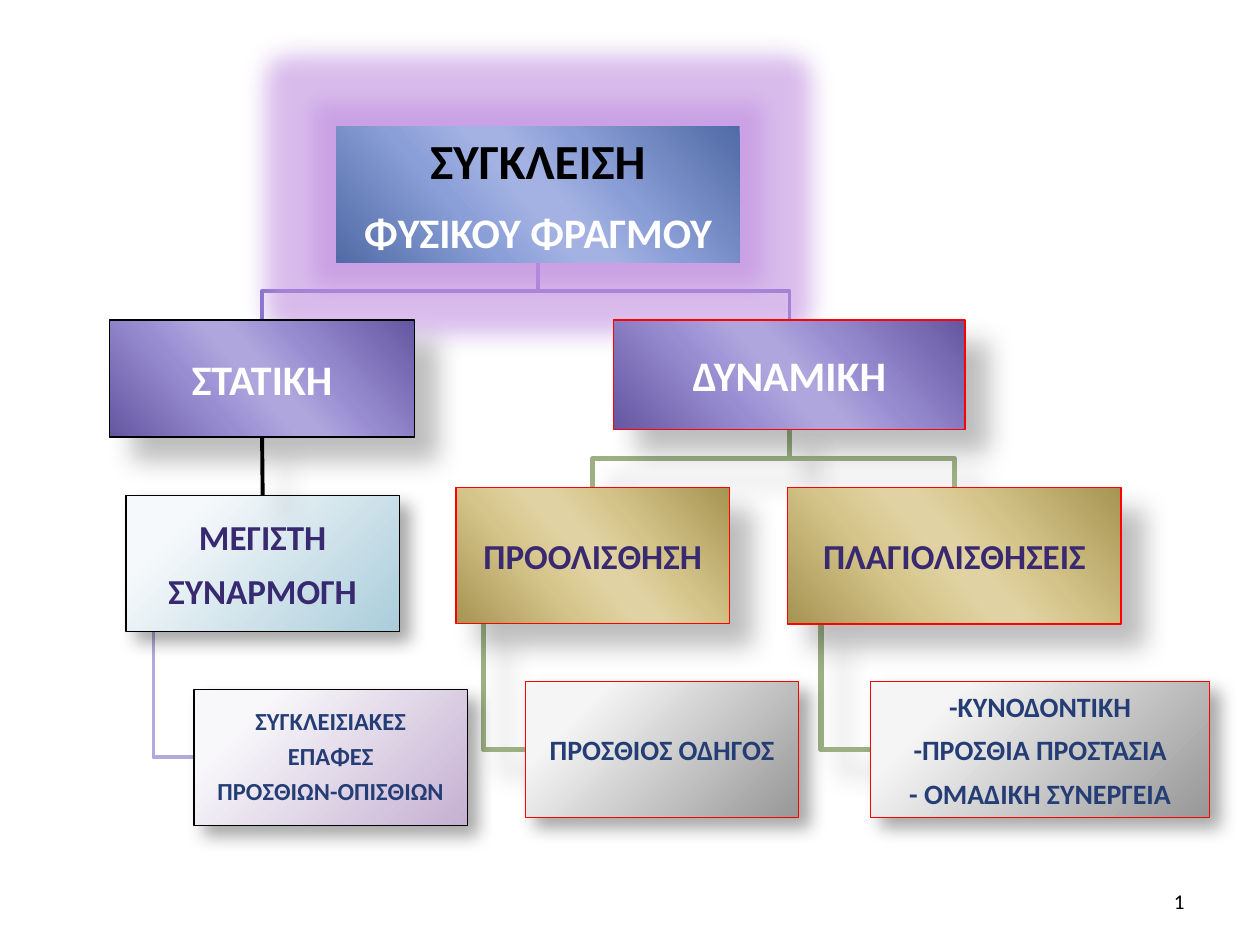
"""Builds a slide with the hierarchy of occlusion types."""
from lxml import etree
from pptx import Presentation
from pptx import util as u
from pptx.dml.color import RGBColor
from pptx.enum import shapes, text
from pptx.oxml import parse_xml
from pptx.oxml.ns import nsdecls, qn

FONT = "Calibri"
COLORS = {
    "black": "000000", "white": "FFFFFF", "red": "FF0000", "indigo": "382971", "navy": "253D75",
    "violet": "806ECA", "lilac": "B2AADB", "green": "9CB084", "glow": "C090E0",
}
BAND_STOPS = (0, 33, 47, 53, 68, 100)
CORNER_STOPS = (20, 100)
GRADIENTS = {
    "blue": ("516BA6", "899DD6", "A3B2E2", "A3B2E2", "8A9ED7", "516BA6"),
    "purple": ("6556A1", "988CD1", "AFA6DD", "AFA6DD", "998DD2", "6556A1"),
    "gold": ("A59452", "D5C489", "E1D2A3", "E1D2A3", "D6C58A", "A59452"),
    "grey": ("F5F5F5", "979797"),
    "ice": ("F6F9FB", "AACDDB"),
    "mauve": ("F8F7FA", "C5B0D2"),
}
DEEP_SHADOW = (26, 15, 18)
SOFT_SHADOW = (35, 10.2, 8)

# name: (left, top, width, height), gradient, outline, outline width, shadow
BOXES = {
    "occlusion": ((2.67, 1, 3.2, 1.08), "blue", None, 0, None),
    "dynamic": ((4.87, 2.54, 2.79, 0.87), "purple", "red", 0.75, DEEP_SHADOW),
    "lateral": ((6.25, 3.87, 2.65, 1.08), "gold", "red", 1, DEEP_SHADOW),
    "guidance": ((6.91, 5.41, 2.69, 1.08), "grey", "red", 0.75, SOFT_SHADOW),
    "protrusion": ((3.62, 3.87, 2.17, 1.08), "gold", "red", 0.75, DEEP_SHADOW),
    "anterior": ((4.17, 5.41, 2.17, 1.08), "grey", "red", 0.75, SOFT_SHADOW),
    "static": ((0.87, 2.54, 2.42, 0.93), "purple", "black", 0.75, DEEP_SHADOW),
    "intercuspal": ((1, 3.93, 2.17, 1.08), "ice", "black", 0.75, SOFT_SHADOW),
    "contacts": ((1.54, 5.47, 2.17, 1.08), "mauve", "black", 0.75, SOFT_SHADOW),
}
# name: lines of (wording, size, colour)
LABELS = {
    "occlusion": [("ΣΥΓΚΛΕΙΣΗ", 28, "black"), ("ΦΥΣΙΚΟΥ ΦΡΑΓΜΟΥ", 24, "white")],
    "dynamic": [("ΔΥΝΑΜΙΚΗ", 24, "white")],
    "lateral": [("ΠΛΑΓΙΟΛΙΣΘΗΣΕΙΣ", 20, "indigo")],
    "guidance": [("-ΚΥΝΟΔΟΝΤΙΚΗ", 16, "navy"), ("-ΠΡΟΣΘΙΑ ΠΡΟΣΤΑΣΙΑ", 16, "navy"),
                 ("- ΟΜΑΔΙΚΗ ΣΥΝΕΡΓΕΙΑ", 16, "navy")],
    "protrusion": [("ΠΡΟΟΛΙΣΘΗΣΗ", 20, "indigo")],
    "anterior": [("ΠΡΟΣΘΙΟΣ ΟΔΗΓΟΣ", 16, "navy")],
    "static": [("ΣΤΑΤΙΚΗ", 24, "white")],
    "intercuspal": [("ΜΕΓΙΣΤΗ", 20, "indigo"), ("ΣΥΝΑΡΜΟΓΗ", 20, "indigo")],
    "contacts": [("ΣΥΓΚΛΕΙΣΙΑΚΕΣ", 14, "navy"), ("ΕΠΑΦΕΣ", 14, "navy"),
                 ("ΠΡΟΣΘΙΩΝ-ΟΠΙΣΘΙΩΝ", 14, "navy")],
}
# parent, child, colour, width, shadow
HANGING = [
    ("intercuspal", "contacts", "lilac", 2, None),
    ("protrusion", "anterior", "green", 3, DEEP_SHADOW),
    ("lateral", "guidance", "green", 3, DEEP_SHADOW),
]
BRANCHES = [
    ("occlusion", "static", "violet", 2, None),
    ("dynamic", "protrusion", "green", 3, DEEP_SHADOW),
    ("dynamic", "lateral", "green", 3, DEEP_SHADOW),
    ("occlusion", "dynamic", "violet", 2, None),
]


def rgb(name):
    return RGBColor.from_string(COLORS[name])


def color_xml(value, alpha=100):
    return f'<a:srgbClr val="{value}"><a:alpha val="{alpha * 1000}"/></a:srgbClr>'


def set_gradient(shape, name):
    tones = GRADIENTS[name]
    banded = len(tones) == len(BAND_STOPS)
    stops = "".join(f'<a:gs pos="{pos * 1000}">{color_xml(tone)}</a:gs>'
                    for pos, tone in zip(BAND_STOPS if banded else CORNER_STOPS, tones))
    if banded:
        direction = f'<a:lin ang="{139 * 60000}" scaled="1"/>'
    else:
        direction = ('<a:path path="circle"><a:fillToRect l="-15000" t="-15000" '
                     'r="115000" b="115000"/></a:path>')
    gradient = parse_xml(f'<a:gradFill {nsdecls("a")} rotWithShape="1">'
                         f'<a:gsLst>{stops}</a:gsLst>{direction}</a:gradFill>')
    shape._element.spPr.find(qn("a:prstGeom")).addnext(gradient)


def set_effects(shape, shadow=None, glow=None):
    effects = ""
    if glow:
        effects = f'<a:glow rad="{u.Pt(glow)}">{color_xml(COLORS["glow"], 60)}</a:glow>'
    if shadow:
        alpha, blur, distance = shadow
        effects += (f'<a:outerShdw blurRad="{u.Pt(blur)}" dist="{u.Pt(distance)}" '
                    f'dir="{45 * 60000}" algn="tl" rotWithShape="0">'
                    f'{color_xml(COLORS["black"], alpha)}</a:outerShdw>')
    properties = shape._element.spPr
    for inherited in properties.findall(qn("a:effectLst")):
        properties.remove(inherited)
    properties.append(parse_xml(f'<a:effectLst {nsdecls("a")}>{effects}</a:effectLst>'))


def set_line(shape, color, width):
    shape.line.color.rgb = rgb(color)
    shape.line.width = u.Pt(width)


def format_run(paragraph, size, color, bold):
    for run in paragraph.runs:
        run.font.name = FONT
        run.font.size = u.Pt(size)
        run.font.bold = bold
        run.font.color.rgb = rgb(color)


def write_label(shape, lines):
    frame = shape.text_frame
    frame.word_wrap = True
    frame.vertical_anchor = text.MSO_ANCHOR.MIDDLE
    inset = u.Inches(0.02 if lines[0][1] >= 24 else 0.01)
    frame.margin_left = frame.margin_right = frame.margin_top = frame.margin_bottom = inset
    frame.text = "\n".join(wording for wording, _, _ in lines)
    for paragraph, (_, size, color) in zip(frame.paragraphs, lines):
        paragraph.alignment = text.PP_ALIGN.CENTER
        if size == 14:
            paragraph.line_spacing = 0.9
        after = etree.SubElement(paragraph._p.get_or_add_pPr(), qn("a:spcAft"))
        etree.SubElement(after, qn("a:spcPct")).set("val", "35000")
        format_run(paragraph, size, color, True)


def add_box(slide, name):
    place, gradient, outline, width, shadow = BOXES[name]
    box = slide.shapes.add_shape(shapes.MSO_SHAPE.RECTANGLE, *map(u.Inches, place))
    set_gradient(box, gradient)
    if outline:
        set_line(box, outline, width)
    else:
        box.line.fill.background()
    set_effects(box, shadow, glow=None if outline else 27)
    write_label(box, LABELS[name])
    return box


def add_bent_line(slide, points, color, width, shadow):
    start, *rest = [tuple(map(u.Inches, point)) for point in points]
    builder = slide.shapes.build_freeform(*start)
    builder.add_line_segments(rest, close=False)
    bent = builder.convert_to_shape()
    bent.fill.background()
    set_line(bent, color, width)
    set_effects(bent, shadow)


def hanging_points(parent, child):
    left, top, width, height = BOXES[parent][0]
    child_left, child_top, _, child_height = BOXES[child][0]
    x, y = left + width / 10, child_top + child_height / 2
    return [(x, top + height), (x, y), (child_left, y)]


def branch_points(parent, child):
    left, top, width, height = BOXES[parent][0]
    child_left, child_top, child_width, _ = BOXES[child][0]
    x, child_x, bottom = left + width / 2, child_left + child_width / 2, top + height
    middle = (bottom + child_top) / 2
    return [(x, bottom), (x, middle), (child_x, middle), (child_x, child_top)]


def add_stem(slide, parent, child):
    stem = slide.shapes.add_connector(shapes.MSO_CONNECTOR.STRAIGHT, 0, 0, 0, 0)
    stem.begin_connect(parent, 2)
    stem.end_connect(child, 0)
    set_line(stem, "black", 2.25)
    set_effects(stem, DEEP_SHADOW)


def add_page_number(slide, number):
    box = slide.shapes.add_textbox(*map(u.Inches, (7.17, 6.95, 2.33, 0.4)))
    frame = box.text_frame
    frame.word_wrap = True
    frame.vertical_anchor = text.MSO_ANCHOR.MIDDLE
    frame.text = number
    frame.paragraphs[0].alignment = text.PP_ALIGN.RIGHT
    format_run(frame.paragraphs[0], 12, "black", False)


def main():
    deck = Presentation()
    deck.slide_width, deck.slide_height = u.Inches(10), u.Inches(7.5)
    slide = deck.slides.add_slide(deck.slide_layouts[6])
    for links, route in ((HANGING, hanging_points), (BRANCHES, branch_points)):
        for parent, child, *style in links:
            add_bent_line(slide, route(parent, child), *style)
    boxes = {name: add_box(slide, name) for name in BOXES}
    add_stem(slide, boxes["static"], boxes["intercuspal"])
    add_page_number(slide, "1")
    deck.save("out.pptx")


if __name__ == "__main__":
    main()
